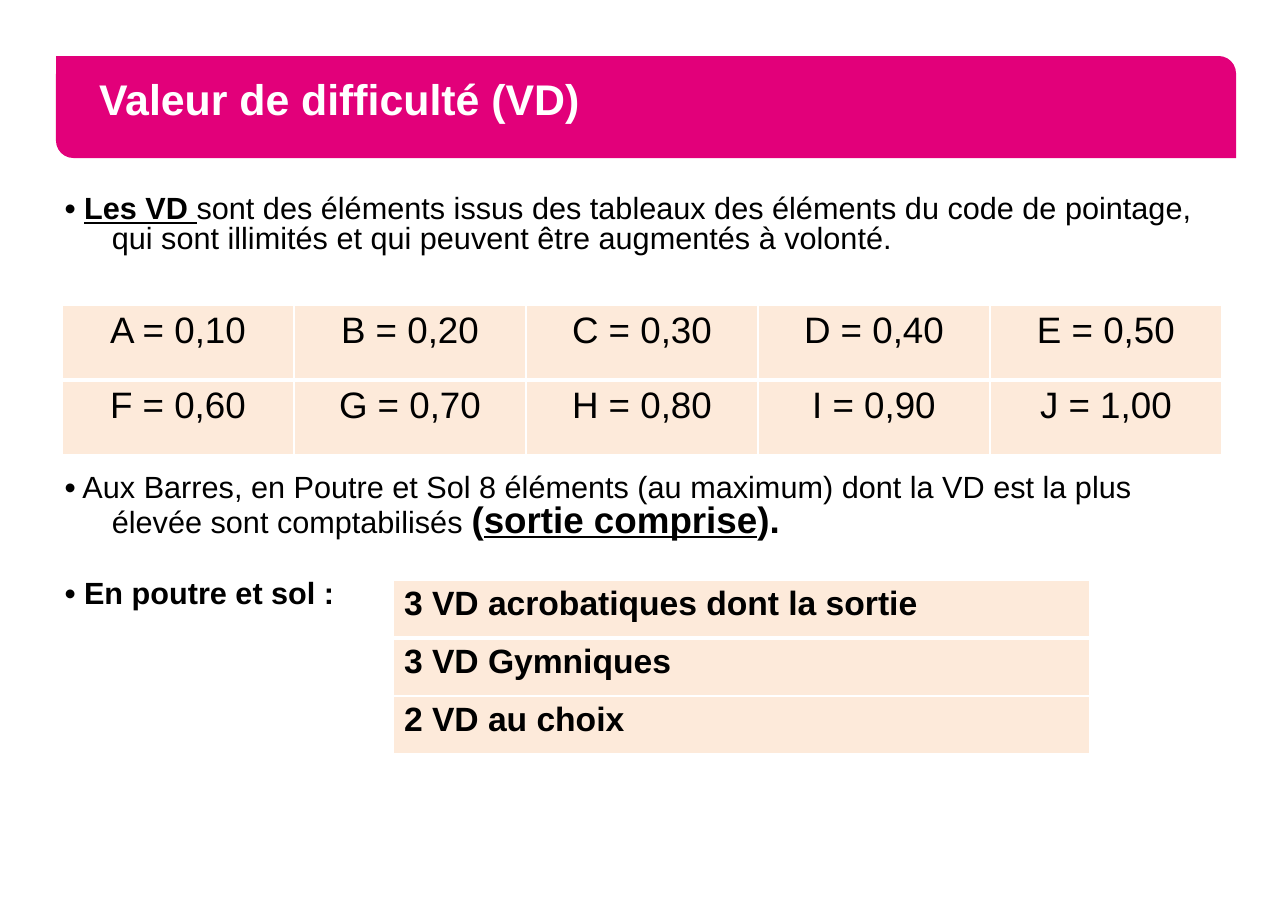
import pptx
import pptx.dml.color
import pptx.enum.shapes
import pptx.enum.text
import pptx.oxml
import pptx.oxml.ns
import pptx.util

PX = 8298  # EMU in one px
FONT = "Arial"
PINK = pptx.dml.color.RGBColor(0xE2, 0x00, 0x7A)
PEACH = pptx.dml.color.RGBColor(0xFD, 0xEA, 0xDA)
WHITE = pptx.dml.color.RGBColor(0xFF, 0xFF, 0xFF)
BLACK = pptx.dml.color.RGBColor(0x00, 0x00, 0x00)
LEFT = pptx.enum.text.PP_ALIGN.LEFT
CENTER = pptx.enum.text.PP_ALIGN.CENTER
HANGING = 47

VALUES = [
    ["A = 0,10", "B = 0,20", "C = 0,30", "D = 0,40", "E = 0,50"],
    ["F = 0,60", "G = 0,70", "H = 0,80", "I = 0,90", "J = 1,00"],
]
REQUIREMENTS = [["3 VD acrobatiques dont la sortie"], ["3 VD Gymniques"], ["2 VD au choix"]]

# Each span: text, size, bold, underline
DEFINITION = [
    ("• ", 20, True, False),
    ("Les VD ", 20, True, True),
    ("sont des éléments issus des tableaux des éléments du code de pointage, "
     "qui sont illimités et qui peuvent être augmentés à volonté.", 20, False, False),
]
COUNTED = [
    ("•", 20, True, False),
    (" Aux Barres, en Poutre et Sol 8 éléments (au maximum) dont la VD est la plus "
     "élevée sont comptabilisés ", 20, False, False),
    ("(", 24, True, False),
    ("sortie comprise", 24, True, True),
    (").", 24, True, False),
]
BEAM_AND_FLOOR = [("• En poutre et sol :", 20, True, False)]


def scaled(box):
    return [length * PX for length in box]


def set_font(font, size, color, bold=False):
    font.name = FONT
    font.size = pptx.util.Pt(size)
    font.color.rgb = color
    font.bold = bold


def add_banner(page, box, title):
    kind = pptx.enum.shapes.MSO_SHAPE.ROUND_2_DIAG_RECTANGLE
    banner = page.shapes.add_shape(kind, *scaled(box))
    banner.adjustments[0] = 0
    banner.adjustments[1] = 0.17
    banner.shadow.inherit = False
    banner.fill.solid()
    banner.fill.fore_color.rgb = PINK
    banner.line.fill.background()
    frame = banner.text_frame
    frame.word_wrap = True
    frame.margin_left = frame.margin_right = 38 * PX
    frame.vertical_anchor = pptx.enum.text.MSO_ANCHOR.MIDDLE
    para = frame.paragraphs[0]
    para.text = title
    para.alignment = LEFT
    para.line_spacing = pptx.util.Pt(22)
    set_font(para.font, 28, WHITE, True)


def add_point(page, box, spans):
    frame = page.shapes.add_textbox(*scaled(box)).text_frame
    frame.word_wrap = True
    para = frame.paragraphs[0]
    para.line_spacing = 0.8
    # Hanging indent
    properties = para._p.get_or_add_pPr()
    properties.set("marL", str(HANGING * PX))
    properties.set("indent", str(-HANGING * PX))
    for text, size, bold, underline in spans:
        span = para.add_run()
        span.text = text
        set_font(span.font, size, BLACK, bold)
        span.font.underline = underline


def add_border(cell, side, points):
    cell._tc.get_or_add_tcPr().append(pptx.oxml.parse_xml(
        f'<a:ln{side} {pptx.oxml.ns.nsdecls("a")} w="{pptx.util.Pt(points)}">'
        f'<a:solidFill><a:srgbClr val="{WHITE}"/></a:solidFill></a:ln{side}>'))


def add_grid(page, box, rows, size, alignment, bold=False):
    table = page.shapes.add_table(len(rows), len(rows[0]), *scaled(box)).table
    table.first_row = table.horz_banding = False
    for row, texts in enumerate(rows):
        for column, text in enumerate(texts):
            cell = table.cell(row, column)
            # The rule under the first row is thicker
            add_border(cell, "L", 1)
            add_border(cell, "R", 1)
            add_border(cell, "T", 3 if row == 1 else 1)
            add_border(cell, "B", 3 if row == 0 else 1)
            cell.fill.solid()
            cell.fill.fore_color.rgb = PEACH
            para = cell.text_frame.paragraphs[0]
            para.text = text
            para.alignment = alignment
            set_font(para.font, size, BLACK, bold)


def add_difficulty_page(deck):
    page = deck.slides.add_slide(deck.slide_layouts[6])
    add_banner(page, (56, 56, 1180, 102), "Valeur de difficulté (VD)")
    # Definition and letter values
    add_point(page, (54, 191, 1182, 75), DEFINITION)
    add_grid(page, (62, 305, 1160, 150), VALUES, 24, CENTER)
    # Counted elements and requirements
    add_point(page, (54, 470, 1182, 75), COUNTED)
    add_point(page, (54, 576, 320, 42), BEAM_AND_FLOOR)
    add_grid(page, (393, 580, 697, 174), REQUIREMENTS, 22, LEFT, True)


def main():
    deck = pptx.Presentation()
    deck.slide_width, deck.slide_height = scaled((1288, 911))
    add_difficulty_page(deck)
    deck.save("out.pptx")


if __name__ == "__main__":
    main()
